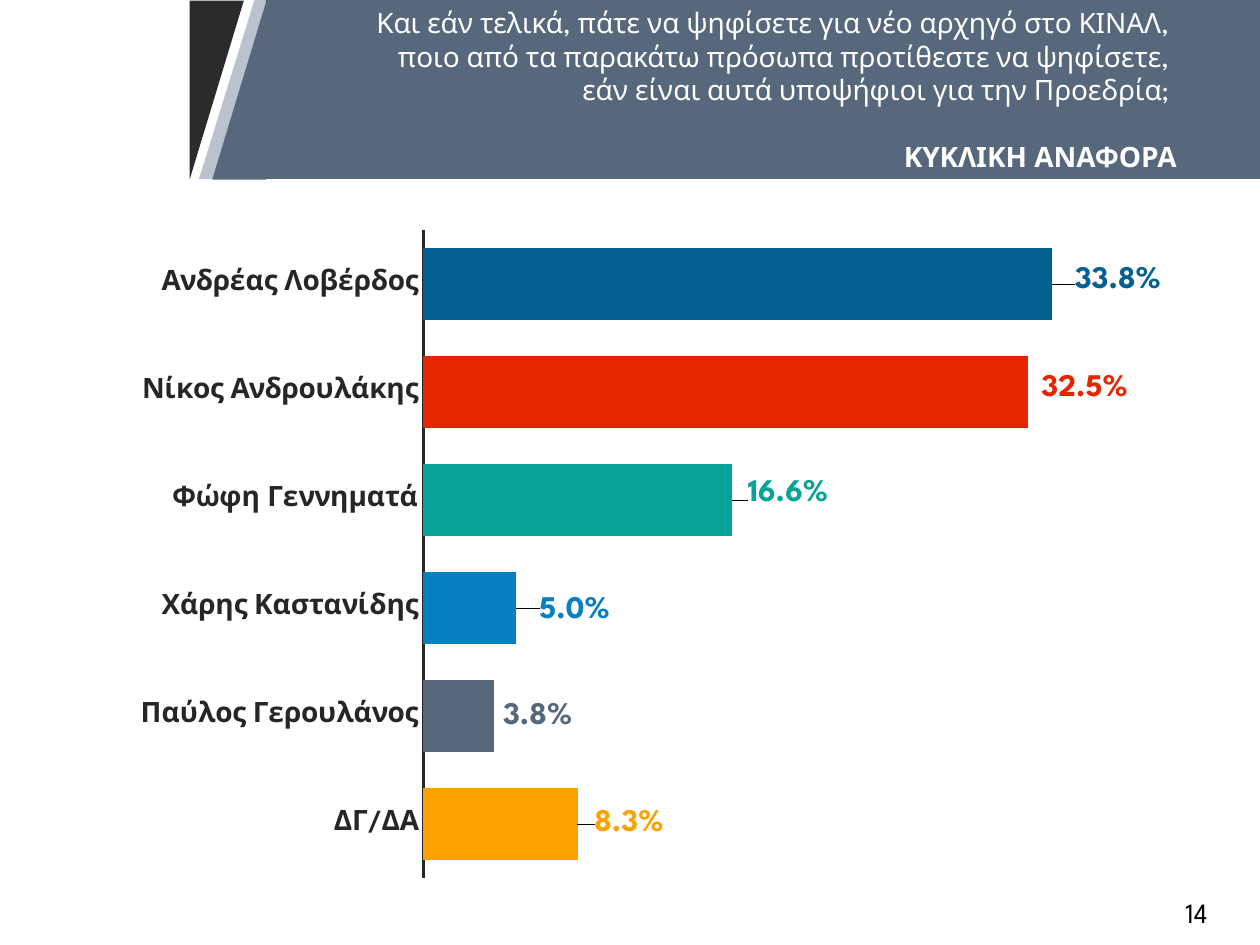
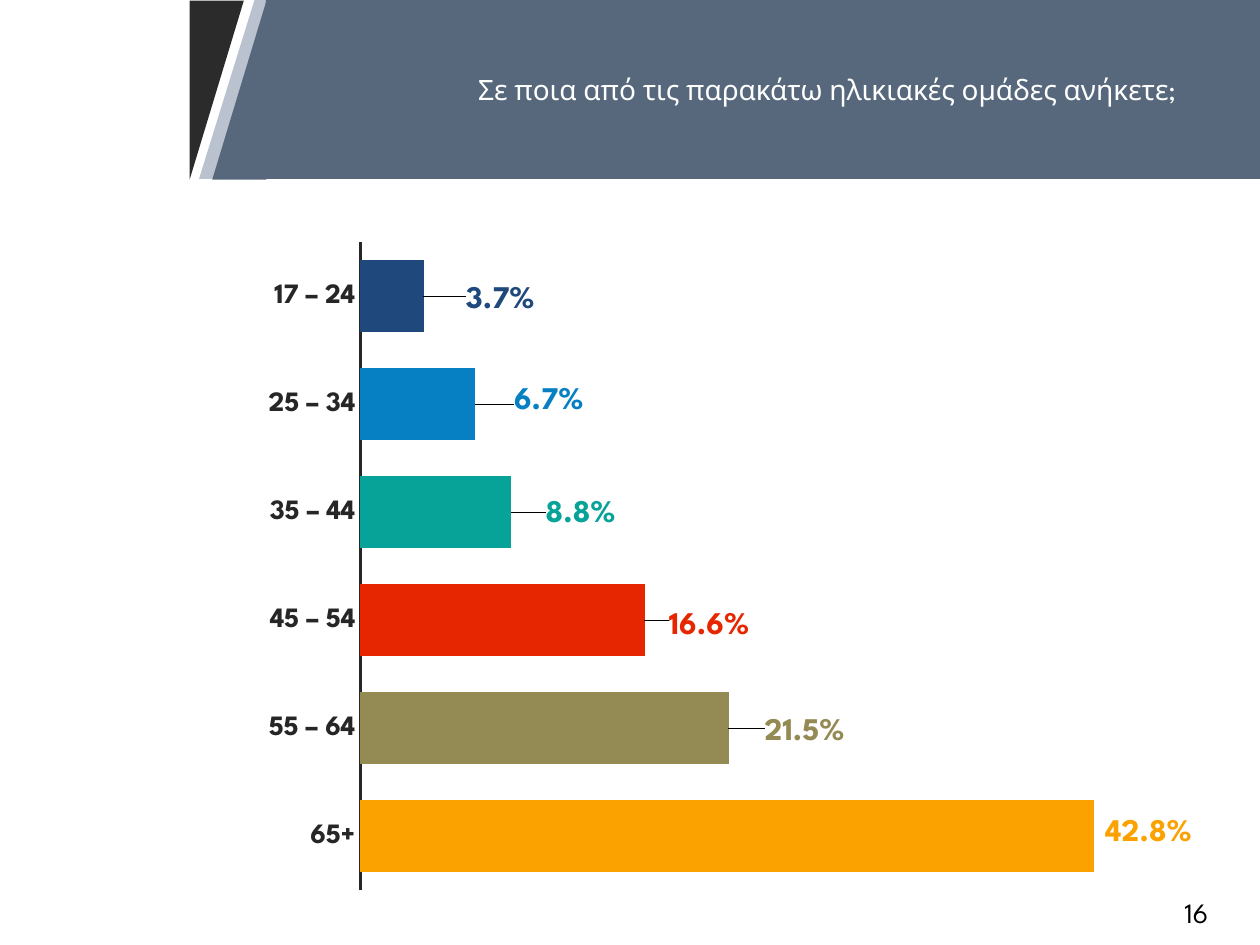
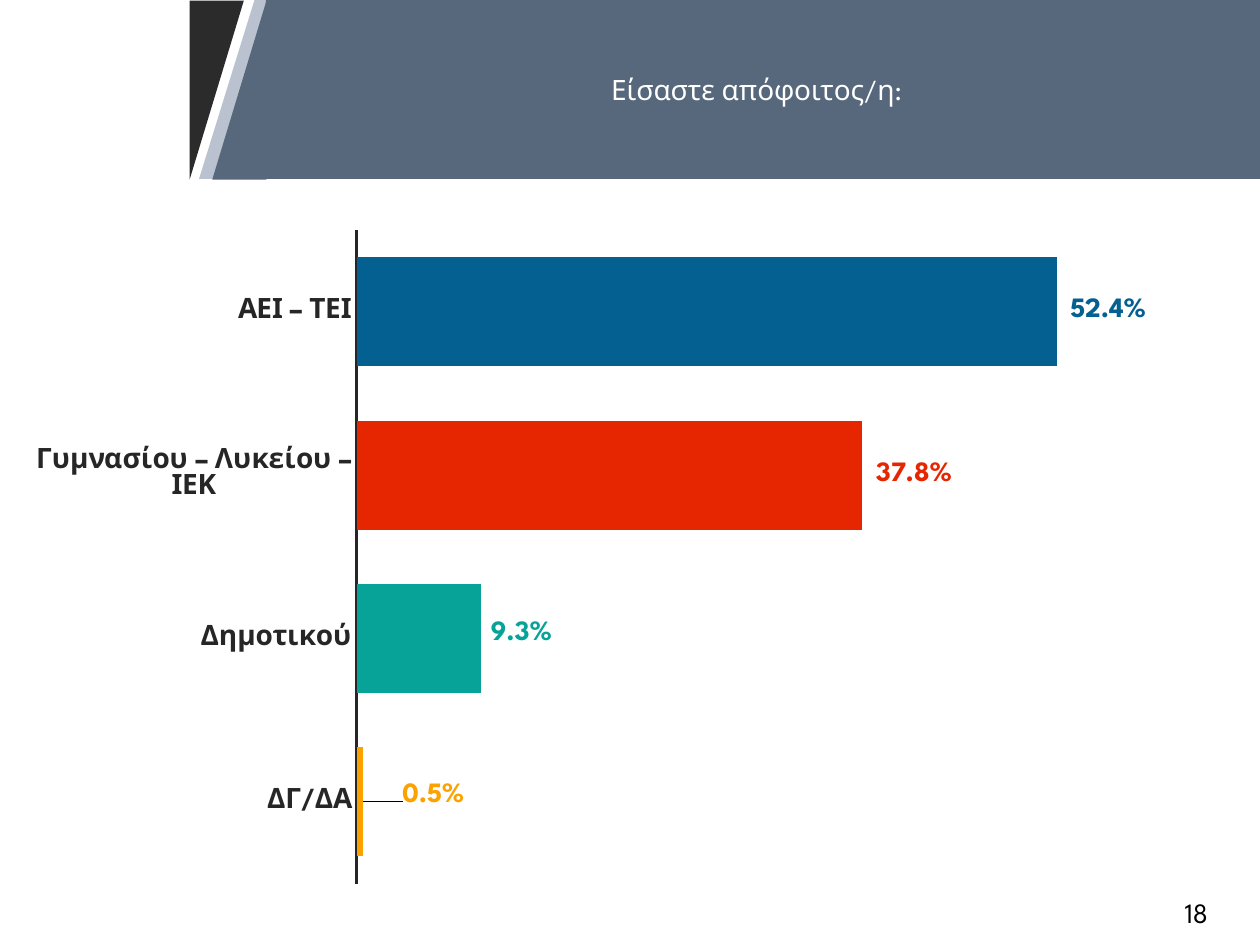
import dataclasses

import pptx
import pptx.chart.data
import pptx.dml.color
import pptx.enum.chart
import pptx.enum.shapes
import pptx.enum.text
import pptx.oxml
import pptx.oxml.ns
import pptx.util

Inches = pptx.util.Inches
Pt = pptx.util.Pt
SHAPE = pptx.enum.shapes.MSO_SHAPE
ALIGN = pptx.enum.text.PP_ALIGN


@dataclasses.dataclass(frozen=True)
class Theme:
    font: str = "League Spartan"
    text_size: int = 16
    label_size: int = 18
    base_size: int = 10
    white: str = "FFFFFF"
    black: str = "000000"
    ink: str = "262626"
    dark: str = "2B2B2B"
    mist: str = "B9C2CE"
    slate: str = "57687C"
    navy: str = "1F497D"
    ocean: str = "056092"
    blue: str = "0680C3"
    red: str = "E62601"
    teal: str = "07A398"
    olive: str = "948A54"
    amber: str = "FBA200"


T = Theme()


def rgb(value):
    return pptx.dml.color.RGBColor.from_string(value)


def set_font(font, size, color, bold=False):
    font.name, font.size, font.bold = T.font, Pt(size), bold
    font.color.rgb = rgb(color)


def write(p, text, size=T.text_size, color=T.black, bold=False,
          align=ALIGN.CENTER, before=0):
    p.alignment = align
    p.space_before = Pt(before)
    p.line_spacing = 1.0
    r = p.add_run()
    r.text = text
    set_font(r.font, size, color, bold)


def manual_layout(x, y, size=None):
    """Chart layout element: an offset, or an inner plot frame when size is given."""
    fields = {"x": x, "y": y}
    if size:
        fields = {"layoutTarget": "inner", "xMode": "edge", "yMode": "edge",
                  **fields, "w": size[0], "h": size[1]}
    inner = "".join(f'<c:{name} val="{val}"/>' for name, val in fields.items())
    return pptx.oxml.parse_xml(
        f'<c:layout {pptx.oxml.ns.nsdecls("c")}>'
        f"<c:manualLayout>{inner}</c:manualLayout></c:layout>")


class Deck:
    """Holds the presentation and the slide being drawn."""

    def __init__(self):
        self.prs = pptx.Presentation()
        self.prs.slide_width, self.prs.slide_height = Inches(10), Inches(7.5)
        self.slide = None

    def new_slide(self):
        self.slide = self.prs.slides.add_slide(self.prs.slide_layouts[5])

    def shape(self, kind, x, y, w, h, color, rotation=0):
        sp = self.slide.shapes.add_shape(
            kind, Inches(x), Inches(y), Inches(w), Inches(h))
        sp.shadow.inherit = False
        sp.fill.solid()
        sp.fill.fore_color.rgb = rgb(color)
        sp.line.fill.background()
        sp.rotation = rotation
        return sp

    def band(self):
        sp = self.shape(SHAPE.PARALLELOGRAM, 1.58, 0, 8.44, 1.42, T.mist)
        sp.adjustments[0] = 0.31
        self.shape(SHAPE.RIGHT_TRIANGLE, 1.01, 0.5, 1.42, 0.43, T.dark, 90)
        self.shape(SHAPE.RIGHT_TRIANGLE, 1.19, 0.5, 1.42, 0.43, T.slate, 270)

    def title(self, lines, subtitle=None, align=ALIGN.RIGHT, insets=(0.66, 0.66)):
        sp = self.slide.shapes.title
        sp.left, sp.top = Inches(2.11), Inches(0)
        sp.width, sp.height = Inches(7.89), Inches(1.42)
        sp.fill.solid()
        sp.fill.fore_color.rgb = rgb(T.slate)
        self.slide.shapes._spTree.append(sp._element)  # bring in front of the band
        tf = sp.text_frame
        tf.word_wrap = True
        tf.auto_size = pptx.enum.text.MSO_AUTO_SIZE.NONE
        tf.vertical_anchor = pptx.enum.text.MSO_ANCHOR.MIDDLE
        tf.margin_left, tf.margin_right = map(Inches, insets)
        for i, line in enumerate(lines):
            p = tf.add_paragraph() if i else tf.paragraphs[0]
            write(p, line, color=T.white, align=align)
        if subtitle:
            write(tf.add_paragraph(), subtitle, color=T.white, bold=True,
                  align=align, before=19)

    def page_number(self, number):
        sp = self.slide.shapes.add_textbox(
            Inches(8.99), Inches(6.98), Inches(1.01), Inches(0.52))
        tf = sp.text_frame
        tf.word_wrap = True
        tf.vertical_anchor = pptx.enum.text.MSO_ANCHOR.MIDDLE
        write(tf.paragraphs[0], str(number))

    def bar_chart(self, rows, plot_frame, axis_max, label_size=T.label_size):
        """Rows hold category, value, colour and the label's x and y offset."""
        data = pptx.chart.data.CategoryChartData(number_format="0.0%")
        data.categories = [row[0] for row in rows]
        data.add_series("Series 1", [row[1] for row in rows])
        chart = self.slide.shapes.add_chart(
            pptx.enum.chart.XL_CHART_TYPE.BAR_STACKED, Inches(0), Inches(1.42),
            Inches(10), Inches(6.08), data).chart
        chart.has_legend = chart.has_title = False
        set_font(chart.font, T.base_size, T.black)

        axis = chart.category_axis
        axis.reverse_order = True
        axis.major_tick_mark = pptx.enum.chart.XL_TICK_MARK.NONE
        axis.format.line.color.rgb = rgb(T.ink)
        axis.format.line.width = Pt(1.5)
        set_font(axis.tick_labels.font, T.text_size, T.ink, True)
        values = chart.value_axis
        values.minimum_scale, values.maximum_scale = 0, axis_max
        values.has_major_gridlines = False
        values.visible = False

        plot = chart.plots[0]
        plot.gap_width, plot.overlap = 50, 100
        plot.vary_by_categories = False
        x, y, *size = plot_frame
        area = chart._chartSpace.chart.plotArea
        for old in area.findall(pptx.oxml.ns.qn("c:layout")):
            area.remove(old)
        area.insert(0, manual_layout(x, y, size))

        series = plot.series[0]
        series.format.fill.solid()
        series.format.fill.fore_color.rgb = rgb(T.blue)
        labels = series.data_labels
        labels.show_value = True
        labels.number_format, labels.number_format_is_linked = "0.0%", False
        labels.position = pptx.enum.chart.XL_LABEL_POSITION.INSIDE_END
        for i, (_, _, color, dx, dy) in enumerate(rows):
            point = series.points[i]
            point.format.fill.solid()
            point.format.fill.fore_color.rgb = rgb(color)
            label = point.data_label
            set_font(label.font, label_size, color, True)
            label.position = pptx.enum.chart.XL_LABEL_POSITION.INSIDE_END
            idx = label._dLbl.find(pptx.oxml.ns.qn("c:idx"))
            idx.addnext(manual_layout(dx, dy))


CANDIDATES = [
    ("Ανδρέας Λοβέρδος", 0.338, T.ocean, 0.09, -0.005),
    ("Νίκος Ανδρουλάκης", 0.325, T.red, 0.083, -0.005),
    ("Φώφη Γεννηματά", 0.166, T.teal, 0.08, -0.009),
    ("Χάρης Καστανίδης", 0.05, T.blue, 0.078, 0.003),
    ("Παύλος Γερουλάνος", 0.038, T.slate, 0.066, 0.001),
    ("ΔΓ/ΔΑ", 0.083, T.amber, 0.072, -0.001),
]
AGES = [
    ("17 – 24", 0.037, T.navy, 0.092, 0.005),
    ("25 – 34", 0.067, T.blue, 0.09, -0.004),
    ("35 – 44", 0.088, T.teal, 0.087, 0.003),
    ("45 – 54", 0.166, T.red, 0.087, 0.008),
    ("55 – 64", 0.215, T.olive, 0.096, 0.005),
    ("65+", 0.428, T.amber, 0.082, -0.004),
]
EDUCATION = [
    ("ΑΕΙ – ΤΕΙ", 0.524, T.ocean, 0.074, -0.001),
    ("Γυμνασίου – Λυκείου – ΙΕΚ", 0.378, T.red, 0.075, -0.001),
    ("Δημοτικού", 0.093, T.teal, 0.06, -0.006),
    ("ΔΓ/ΔΑ", 0.005, T.amber, 0.084, -0.008),
]
SLIDES = [
    (14,
     dict(lines=["Και εάν τελικά, πάτε να ψηφίσετε για νέο αρχηγό στο ΚΙΝΑΛ, ",
                 "ποιο από τα παρακάτω πρόσωπα προτίθεστε να ψηφίσετε, ",
                 "εάν είναι αυτά υποψήφιοι για την Προεδρία; "],
          subtitle="ΚΥΚΛΙΚΗ ΑΝΑΦΟΡΑ"),
     dict(rows=CANDIDATES, plot_frame=(0.336, 0.067, 0.591, 0.846), axis_max=0.4)),
    (16,
     dict(lines=["Σε ποια από τις παρακάτω ηλικιακές ομάδες ανήκετε;"]),
     dict(rows=AGES, plot_frame=(0.286, 0.083, 0.612, 0.846), axis_max=0.45)),
    (18,
     dict(lines=["Είσαστε απόφοιτος/η:"], align=ALIGN.CENTER, insets=(0.76, 0.86)),
     dict(rows=EDUCATION, plot_frame=(0.283, 0.067, 0.637, 0.853), axis_max=0.6,
          label_size=T.text_size)),
]


def main():
    deck = Deck()
    for number, title, chart in SLIDES:
        deck.new_slide()
        deck.bar_chart(**chart)
        deck.band()
        deck.title(**title)
        deck.page_number(number)
    deck.prs.save("out.pptx")


if __name__ == "__main__":
    main()
